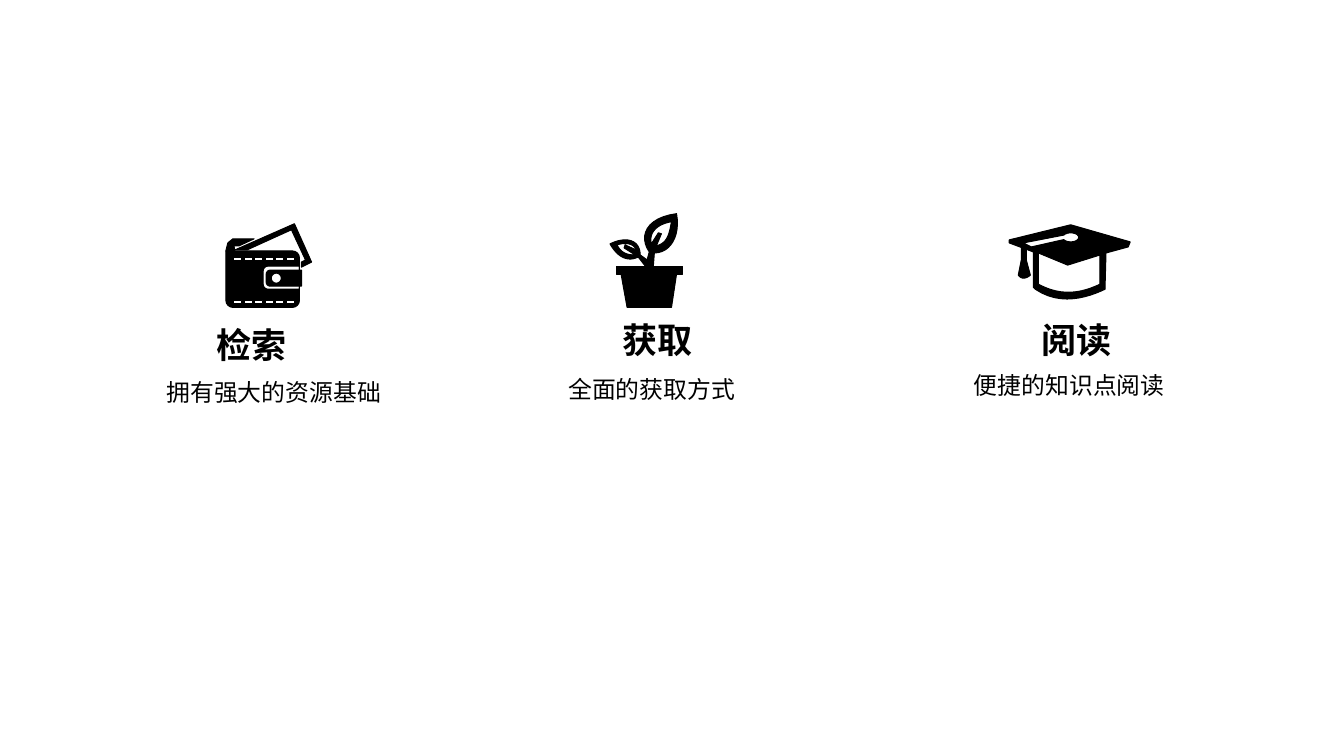
"""Build a slide with three service steps, each an icon over a heading and a caption."""
import math

from lxml import etree
from pptx import Presentation, util as u
from pptx.dml.color import RGBColor
from pptx.enum import text
from pptx.oxml.ns import qn

PX = 9144
BLACK = RGBColor(0, 0, 0)
LEFT, CENTER = text.PP_ALIGN.LEFT, text.PP_ALIGN.CENTER


def box(left, top, width, height):
    """Return the corners of a rectangle."""
    right, bottom = left + width, top + height
    return [(left, top), (right, top), (right, bottom), (left, bottom)]


def arc(center, radii, start, end, steps=16):
    """Return points along an ellipse between two angles in degrees."""
    angles = [math.radians(start + (end - start) * i / steps) for i in range(steps + 1)]
    return [(center[0] + radii[0] * math.cos(a), center[1] + radii[1] * math.sin(a))
            for a in angles]


def rounded(left, top, width, height, radii):
    """Return a rectangle with its own radius at each corner, clockwise from top left."""
    points = []
    inward = [(1, 1), (-1, 1), (-1, -1), (1, -1)]
    for turn, (corner, radius) in enumerate(zip(box(left, top, width, height), radii)):
        center = [at + radius * way for at, way in zip(corner, inward[turn])]
        points += arc(center, (radius, radius), 180 + 90 * turn, 270 + 90 * turn, 4)
    return points


def curve(start, pull_out, pull_in, end, steps=12):
    """Return points along a cubic curve."""
    points = []
    for t in (i / steps for i in range(steps + 1)):
        weights = (1 - t) ** 3, 3 * t * (1 - t) ** 2, 3 * t * t * (1 - t), t ** 3
        points.append(tuple(sum(w * p for w, p in zip(weights, axis))
                            for axis in zip(start, pull_out, pull_in, end)))
    return points


def wallet():
    """Return the outlines of a wallet with a card sticking out."""
    flap = [(0, 27), (2, 19), (7, 15), (28, 15), (13, 22), (8, 22), (9, 27)]
    card = [(9, 26), (68, 0), (85, 38), (75, 43), (75, 38), (79, 36), (65, 6), (21, 26)]
    body = rounded(0, 27, 73, 56, radii=(0, 7, 7, 7))
    clasp_gap = rounded(37, 42, 36, 23, radii=(5, 0, 0, 5))
    clasp = rounded(40, 46, 35, 16, radii=(4, 0, 0, 4))
    button = arc((50, 54), (5, 5), 0, 360)
    stitches = [box(8 + 10.4 * column, row, 8, 3) for row in (33, 76) for column in range(6)]
    return [flap, card, body, clasp_gap, clasp, button, *stitches]


def graduation_cap():
    """Return the outlines of a mortarboard with its tassel."""
    board = [(0, 18), (0, 15), (61, 0), (120, 17), (118, 22), (96, 28)]
    crown = curve((95, 64), (78, 72), (51, 81), (26, 64)) + [(24, 62), (24, 27)]
    opening = [(29, 28), (58, 40), (90, 30)] + curve((90, 59), (73, 67), (53, 72), (29, 59))
    cord = [(22, 22), (14, 18)] + arc((61, 12.5), (8, 4.5), 210, 510)
    tassel = ([(12, 35), (12, 23), (17, 25), (17, 35)]
              + curve((21, 50), (16, 54), (12, 54), (9, 50)))
    return [board + crown, opening, cord, tassel]


def leaf(base, tip, back, front, tail):
    """Return a leaf from base to tip along its back and down its front to the tail."""
    return curve(base, *back, tip) + curve(tip, *front, tail)


def potted_plant():
    """Return the outlines of a pot with a large and a small leaf."""
    rim = box(6, 52, 66, 8)
    pot = [(11, 60), (66, 60), (61, 93), (17, 93)]
    large_leaf = leaf(base=(39, 38), tip=(66, 0), back=[(28, 22), (36, 4)],
                      front=[(70, 22), (60, 39)], tail=(44, 39))
    small_leaf = leaf(base=(30, 41), tip=(0, 30), back=[(30, 26), (16, 22)],
                      front=[(8, 44), (18, 48)], tail=(28, 43))
    stem = [(43, 52), (35, 52)]
    twig = [(35, 52), (37, 46)]
    large_inside = leaf(base=(41, 30), tip=(61, 8), back=[(38, 18), (48, 10)],
                        front=[(59, 18), (58, 29)], tail=(46, 32))
    small_inside = leaf(base=(26, 36), tip=(7, 31), back=[(24, 30), (16, 28)],
                        front=[(11, 39), (17, 41)], tail=(25, 41))
    large_vein = [(51, 20), (48, 19)]
    small_vein = [(14, 34), (15, 31)]
    return [rim, pot, large_leaf + stem, small_leaf + twig,
            large_inside + large_vein, small_inside + small_vein]


class Board:
    """Hold the style and the current slide."""

    font = "Noto Sans CJK SC"
    ink = BLACK
    outline = u.Pt(0.75)

    def __init__(self, deck):
        """Add a blank slide to the deck."""
        self.slide = deck.slides.add_slide(deck.slide_layouts[6])
        self.shapes = self.slide.shapes

    def start_group(self):
        """Send the following elements to a new group."""
        self.shapes = self.slide.shapes.add_group_shape().shapes

    def label(self, wording, frame, size, bold=False, align=CENTER, spacing=1.0, inset=10):
        """Add one line of text."""
        area = self.shapes.add_textbox(*(n * PX for n in frame)).text_frame
        area.word_wrap = True
        area.vertical_anchor = text.MSO_ANCHOR.MIDDLE
        area.margin_left = inset * PX
        line = area.paragraphs[0]
        line.alignment = align
        line.line_spacing = spacing
        run = line.add_run()
        run.text = wording
        run.font.size = u.Pt(size)
        run.font.bold = bold
        run.font.name = self.font
        run.font.color.rgb = self.ink
        etree.SubElement(run.font._element, qn("a:ea"), typeface=self.font)

    def icon(self, outlines, origin):
        """Add one filled shape whose inner outlines are holes."""
        placed = [[tuple(round((at + shift) * PX) for at, shift in zip(point, origin))
                   for point in outline] for outline in outlines]
        builder = self.shapes.build_freeform(*placed[0][0], scale=1.0)
        for number, (start, *others) in enumerate(placed):
            if number:
                builder.move_to(*start)
            builder.add_line_segments(others, close=True)
        icon = builder.convert_to_shape()
        icon.shadow.inherit = False
        icon.fill.solid()
        icon.fill.fore_color.rgb = self.ink
        icon.line.color.rgb = self.ink
        icon.line.width = self.outline


STEPS = [
    dict(heading=dict(wording="检索", frame=(134, 316, 329, 52), align=LEFT, inset=81),
         caption=dict(wording="拥有强大的资源基础", frame=(121, 361, 301, 47), spacing=1.3),
         icon=dict(outlines=wallet(), origin=(224, 222))),
    dict(heading=dict(wording="阅读", frame=(903, 311, 329, 52)),
         caption=dict(wording="便捷的知识点阅读", frame=(956, 362, 301, 39), align=LEFT),
         icon=dict(outlines=graduation_cap(), origin=(1001, 223))),
    dict(heading=dict(wording="获取", frame=(488, 311, 329, 52)),
         caption=dict(wording="全面的获取方式", frame=(496, 358, 301, 47), spacing=1.3),
         icon=dict(outlines=potted_plant(), origin=(605, 212))),
]


def main():
    """Draw every step and save the deck."""
    deck = Presentation()
    deck.slide_width, deck.slide_height = 1333 * PX, 750 * PX
    board = Board(deck)
    for step in STEPS:
        board.start_group()
        board.label(size=25, bold=True, **step["heading"])
        board.label(size=17, **step["caption"])
        board.icon(**step["icon"])
    deck.save("out.pptx")


if __name__ == "__main__":
    main()
